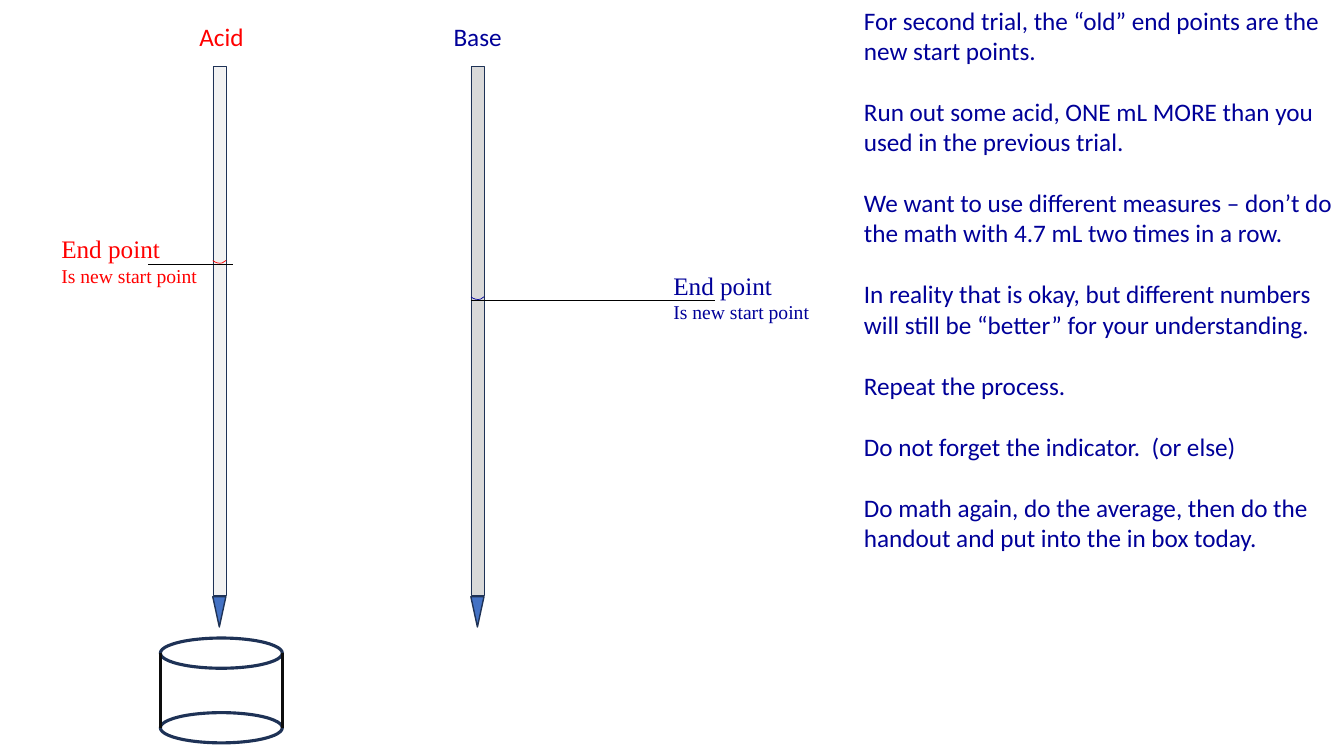
from dataclasses import dataclass

from lxml import etree
from pptx import Presentation
from pptx import util as u
from pptx.dml.color import RGBColor
from pptx.enum import shapes
from pptx.oxml.ns import qn

PX = u.Inches(1) // 100  # 100 px to the inch


@dataclass(frozen=True)
class Theme:
    acid: str = "FF0000"
    base: str = "000099"
    acid_tube: str = "F2F2F2"
    base_tube: str = "D9D9D9"
    tip: str = "4472C4"
    outline: str = "1E3256"
    beaker_wall: str = "0D0D0D"
    pointer: str = "000000"
    sans: str = "Calibri"
    serif: str = "Times New Roman"
    body_size: int = 18
    small_size: int = 14


THEME = Theme()

INSTRUCTIONS = [
    "For second trial, the “old” end points are the new start points.",
    "Run out some acid, ONE mL MORE than you used in the previous trial.",
    "We want to use different measures – don’t do the math with 4.7 mL two times in a row.",
    "In reality that is okay, but different numbers will still be “better” for your understanding.",
    "Repeat the process.",
    "Do not forget the indicator.  (or else)",
    "Do math again, do the average, then do the handout and put into the in box today.",
]


def emu(*lengths):
    return [length * PX for length in lengths]


def style_line(line, color, width):
    line.color.rgb = RGBColor.from_string(color)
    line.width = u.Pt(width)


def add_shape(slide, kind, box, line_color, line_width, fill=None, rotation=0):
    shape = slide.shapes.add_shape(kind, *emu(*box))
    shape.shadow.inherit = False
    shape.rotation = rotation
    if fill:
        shape.fill.solid()
        shape.fill.fore_color.rgb = RGBColor.from_string(fill)
    else:
        shape.fill.background()
    style_line(shape.line, line_color, line_width)


def add_line(slide, start, end, color, width):
    connector = slide.shapes.add_connector(
        shapes.MSO_CONNECTOR.STRAIGHT, *emu(*start, *end))
    style_line(connector.line, color, width)
    etree.SubElement(connector._element.spPr, qn("a:effectLst"))


def add_text(slide, box, lines, font_name, color, gap=0):
    """Write (wording, size) lines, with a gap in points after each."""
    frame = slide.shapes.add_textbox(*emu(*box)).text_frame
    frame.word_wrap = True
    for index, (wording, size) in enumerate(lines):
        paragraph = frame.add_paragraph() if index else frame.paragraphs[0]
        paragraph.text = wording
        paragraph.space_after = u.Pt(gap)
        paragraph.font.name = font_name
        paragraph.font.size = u.Pt(size)
        paragraph.font.color.rgb = RGBColor.from_string(color)


def add_burette(slide, name, name_left, left, tube_fill, color):
    kinds = shapes.MSO_SHAPE
    add_shape(slide, kinds.RECTANGLE, (left, 66, 13, 525),
              THEME.outline, 0.25, tube_fill)
    add_shape(slide, kinds.ISOSCELES_TRIANGLE, (left, 592, 13, 30),
              THEME.outline, 1, THEME.tip, 180)
    add_text(slide, (name_left, 16, 100, 40),
             [(name, THEME.body_size)], THEME.sans, color)


def add_end_point(slide, tube_left, level, pointer_left, pointer_right, note_left, color):
    add_shape(slide, shapes.MSO_SHAPE.ARC, (tube_left - 3, level - 20, 17, 20),
              color, 0.5, rotation=129.7)
    add_line(slide, (pointer_left, level), (pointer_right, level), THEME.pointer, 0.5)
    add_text(slide, (note_left, level - 35, 186, 64),
             [("End point", THEME.body_size), ("Is new start point", THEME.small_size)],
             THEME.serif, color)


def add_beaker(slide, left, top, width, depth):
    rim_height = 30
    for rim_top in (top, top + depth):
        add_shape(slide, shapes.MSO_SHAPE.OVAL, (left, rim_top, width, rim_height),
                  THEME.outline, 2.25)
    wall_top = top + rim_height // 2
    for x in (left, left + width):
        add_line(slide, (x, wall_top), (x, wall_top + depth), THEME.beaker_wall, 2.25)


def main():
    presentation = Presentation()
    presentation.slide_width, presentation.slide_height = emu(1333, 750)
    slide = presentation.slides.add_slide(presentation.slide_layouts[6])

    # Burettes
    acid_left, base_left = 211, 467
    add_burette(slide, "Acid", 188, acid_left, THEME.acid_tube, THEME.acid)
    add_burette(slide, "Base", 440, base_left, THEME.base_tube, THEME.base)

    # Instructions, one empty line's height apart
    add_text(slide, (847, 0, 487, 646),
             [(wording, THEME.body_size) for wording in INSTRUCTIONS],
             THEME.sans, THEME.base, gap=22)

    # Beaker under the acid
    add_beaker(slide, 159, 633, 121, 74)

    # End points
    add_end_point(slide, acid_left, 262, 147, 231, 51, THEME.acid)
    add_end_point(slide, base_left, 298, base_left, 709, 658, THEME.base)

    presentation.save("out.pptx")


if __name__ == "__main__":
    main()
